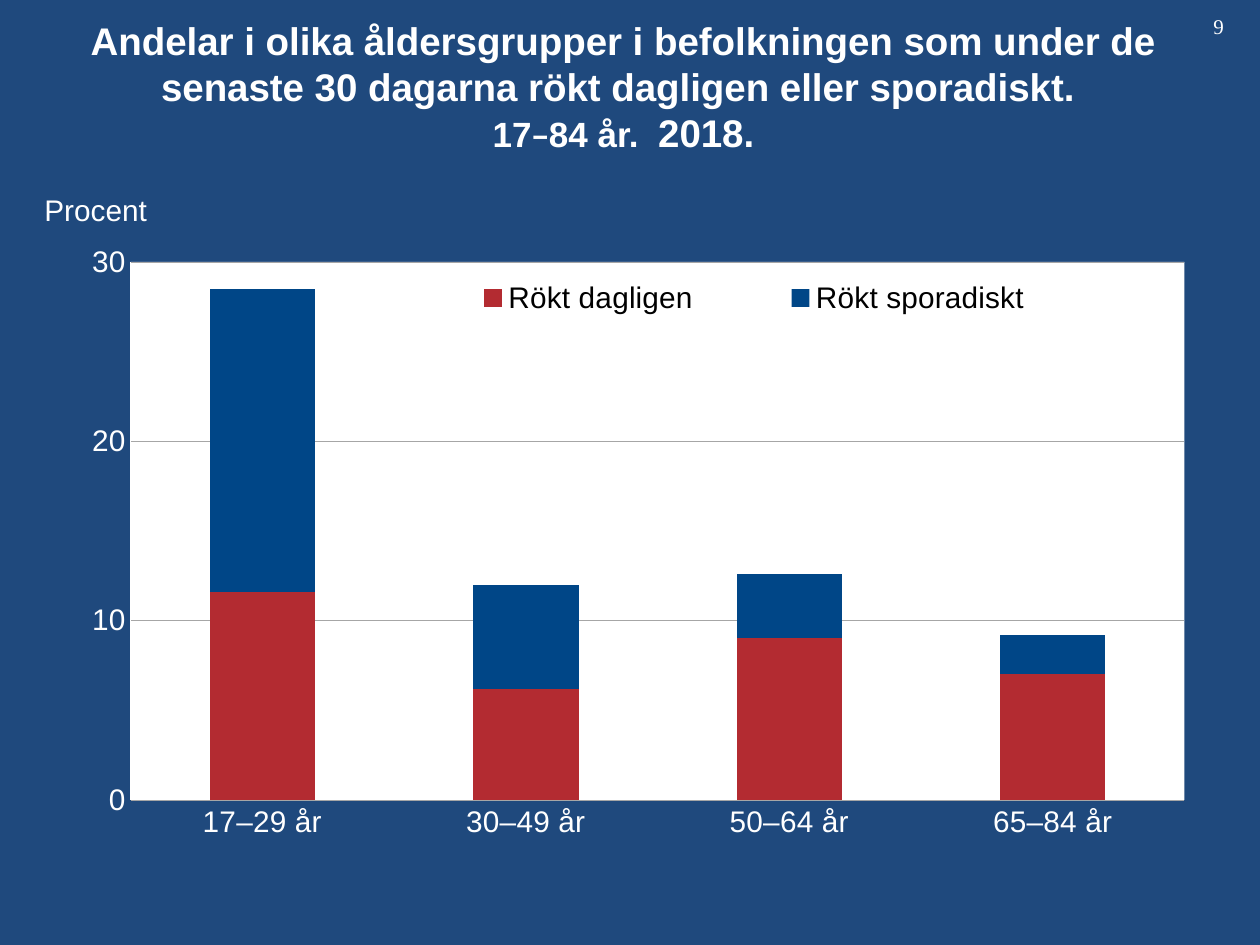
import pptx
import pptx.chart.data
import pptx.dml.color
import pptx.enum.chart
import pptx.enum.text
import pptx.oxml
import pptx.oxml.ns
import pptx.util

PX = 914400 / 126
HUES = {"back": "1F497D", "white": "FFFFFF", "black": "000000",
        "grid": "A6A6A6", "daily": "B32B31", "some": "004687",
        "gold": "F29200", "green": "9BBB59"}
qn = pptx.oxml.ns.qn
enum = pptx.enum.chart


def rgb(name):
    return pptx.dml.color.RGBColor.from_string(HUES[name])


def style(font, size, hue="white", name="Arial", bold=False):
    form = {"size": pptx.util.Pt(size), "name": name, "bold": bold}
    for key, val in form.items():
        setattr(font, key, val)
    font.color.rgb = rgb(hue)


deck = pptx.Presentation()
deck.slide_width, deck.slide_height = int(1260 * PX), int(945 * PX)
slide = deck.slides.add_slide(deck.slide_layouts[5])
slide.background.fill.solid()
slide.background.fill.fore_color.rgb = rgb("back")

# Title
title = slide.shapes.title
spot = {"left": 32, "top": 7, "width": 1183, "height": 158}
for key, val in spot.items():
    setattr(title, key, int(val * PX))
frame = title.text_frame
frame.word_wrap = True
frame.auto_size = pptx.enum.text.MSO_AUTO_SIZE.NONE
frame.vertical_anchor = pptx.enum.text.MSO_ANCHOR.MIDDLE
para = frame.paragraphs[0]
para.alignment = pptx.enum.text.PP_ALIGN.CENTER
lead = ("Andelar i olika åldersgrupper i befolkningen som under de "
        "senaste 30 dagarna rökt dagligen eller sporadiskt. ")
runs = [(lead, 22, "Arial"), (None, 22, "Arial"), ("17", 20, "Arial"),
        ("–", 20, "Cabin"), ("84 år.  ", 20, "Arial"), ("2018.", 22, "Arial")]
for text, size, face in runs:
    if text is None:
        para.add_line_break()
        continue
    run = para.add_run()
    run.text = text
    style(run.font, size, name=face, bold=True)

# Stacked columns; two series hold no values yet
sets = [("Rökt dagligen", (11.6, 6.2, 9, 7), "daily"),
        ("Series 2", (None,) * 4, "gold"),
        ("Rökt sporadiskt ", (16.9, 5.8, 3.6, 2.2), "some"),
        ("Series 4", (None,) * 4, "green")]
data = pptx.chart.data.CategoryChartData()
data.categories = ["17–29 år", "30–49 år", "50–64 år", "65–84 år"]
for name, vals, hue in sets:
    data.add_series(name, vals)
place = [int(n * PX) for n in (44, 197, 1171, 722)]
chart = slide.shapes.add_chart(
    enum.XL_CHART_TYPE.COLUMN_STACKED, *place, data).chart
chart.has_title = False
style(chart.font, 17)
plot = chart.plots[0]
plot.gap_width, plot.overlap = 150, 100
plot.vary_by_categories = False
for bar, (name, vals, hue) in zip(plot.series, sets):
    bar.format.fill.solid()
    bar.format.fill.fore_color.rgb = rgb(hue)

# Axes
rows = chart.value_axis
scale = {"minimum_scale": 0, "maximum_scale": 30, "major_unit": 10,
         "has_major_gridlines": True}
for key, val in scale.items():
    setattr(rows, key, val)
rows.tick_labels.number_format = "#,##0"
rows.tick_labels.number_format_is_linked = False
for axis in (chart.category_axis, rows):
    axis.major_tick_mark = enum.XL_TICK_MARK.NONE
    axis.minor_tick_mark = enum.XL_TICK_MARK.NONE
    style(axis.tick_labels.font, 17)
lines = [(chart.category_axis, "white", 0.75), (rows, "white", 0.22),
         (rows.major_gridlines, "grid", 0.22)]
for part, hue, wide in lines:
    part.format.line.color.rgb = rgb(hue)
    part.format.line.width = pptx.util.Pt(wide)

# Legend inside the plot
chart.has_legend = True
key = chart.legend
key.position = enum.XL_LEGEND_POSITION.TOP
key.include_in_layout = False
style(key.font, 17, "black")


def layout(x, y, w, h, inner=False):
    """Make a manual layout from fractions of the chart."""
    kind = '<c:layoutTarget val="inner"/>' if inner else ""
    modes = "".join(f'<c:{n}Mode val="edge"/>' for n in "xy")
    sizes = "".join(f'<c:{n} val="{v}"/>' for n, v in zip("xywh", (x, y, w, h)))
    return pptx.oxml.parse_xml(
        f'<c:layout {pptx.oxml.ns.nsdecls("c")}><c:manualLayout>'
        f"{kind}{modes}{sizes}</c:manualLayout></c:layout>")


area = chart.element.find(".//" + qn("c:plotArea"))
for old in area.findall(qn("c:layout")):
    area.remove(old)
area.insert(0, layout(0.074, 0.09, 0.9, 0.745, inner=True))
area.append(pptx.oxml.parse_xml(
    f'<c:spPr {pptx.oxml.ns.nsdecls("c", "a")}><a:solidFill>'
    f'<a:srgbClr val="{HUES["white"]}"/></a:solidFill></c:spPr>'))
node = chart.element.find(".//" + qn("c:legend"))
for old in node.findall(qn("c:layout")):
    node.remove(old)
side = node.find(qn("c:legendPos"))
side.addnext(layout(0.3, 0.11, 0.62, 0.06))
for num in (3, 1):
    side.addnext(pptx.oxml.parse_xml(
        f'<c:legendEntry {pptx.oxml.ns.nsdecls("c")}><c:idx val="{num}"/>'
        '<c:delete val="1"/></c:legendEntry>'))

# Page number and unit
notes = [("9", (1201, 7, 59, 38), 12, "Times New Roman"),
         ("Procent", (32, 186, 130, 49), 17, "Arial")]
for text, spot, size, face in notes:
    box = slide.shapes.add_textbox(*[int(n * PX) for n in spot])
    box.text_frame.word_wrap = True
    run = box.text_frame.paragraphs[0].add_run()
    run.text = text
    style(run.font, size, name=face)

deck.save("out.pptx")
